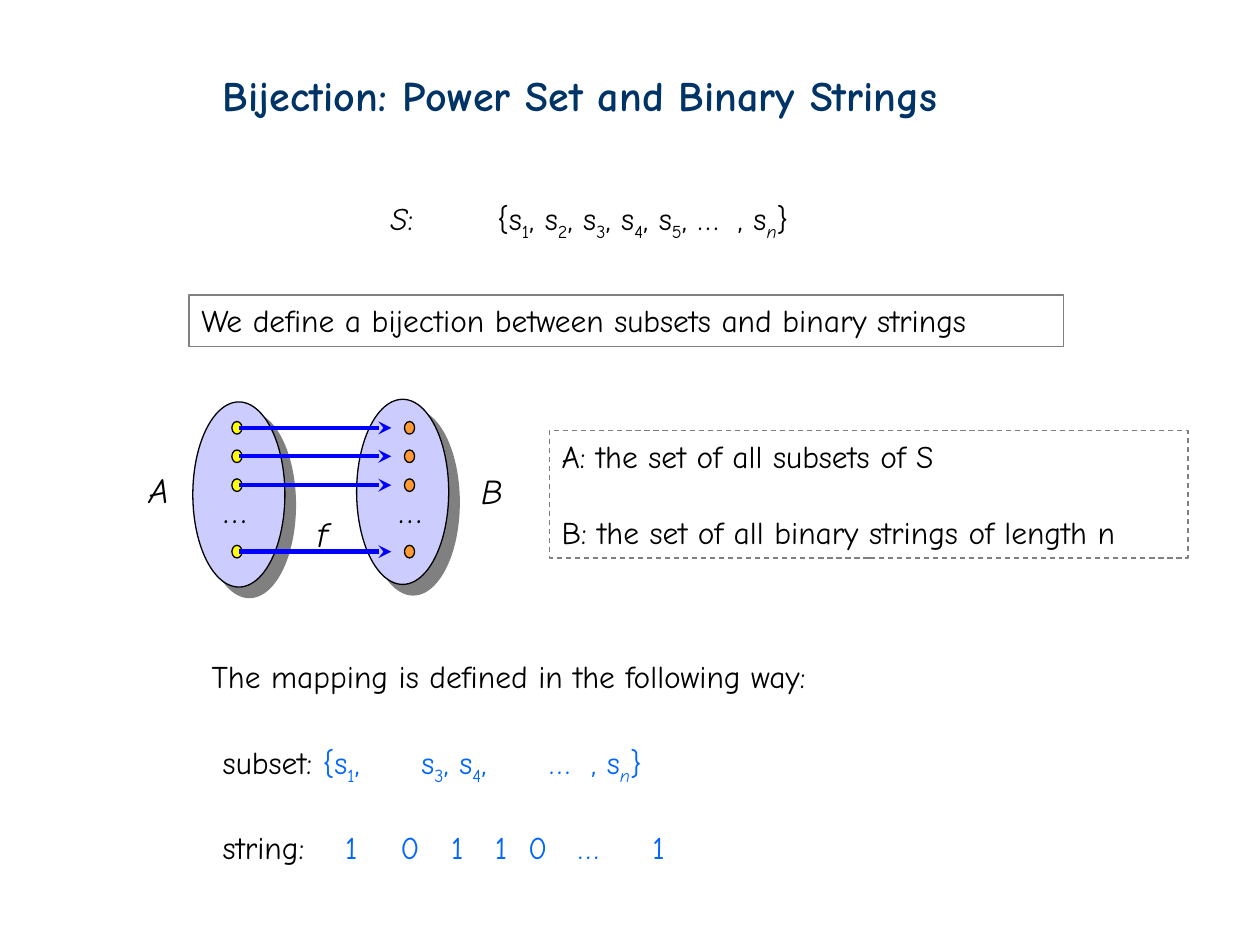
from dataclasses import dataclass
from typing import NamedTuple

from lxml import etree
from pptx import Presentation
from pptx.dml.color import RGBColor
from pptx.enum.dml import MSO_LINE
from pptx.enum.shapes import MSO_CONNECTOR, MSO_SHAPE
from pptx.enum.text import MSO_ANCHOR, PP_ALIGN
from pptx.oxml.ns import qn
from pptx.shapes.autoshape import Shape
from pptx.slide import Slide
from pptx.util import Pt

ELLIPSE, RECTANGLE = MSO_SHAPE.OVAL, MSO_SHAPE.RECTANGLE
STRAIGHT = MSO_CONNECTOR.STRAIGHT
LEFT, CENTER, TOP = PP_ALIGN.LEFT, PP_ALIGN.CENTER, MSO_ANCHOR.TOP
DASH = MSO_LINE.DASH


@dataclass(frozen=True)
class Theme:
    font: str = "Comic Neue"
    title_size: float = 24
    label_size: float = 20
    body_size: float = 18
    title: str = "003366"
    ink: str = "000000"
    accent: str = "0066FF"
    frame: str = "808080"
    set_fill: str = "CCCCFF"
    subset_dot: str = "FFFF00"
    string_dot: str = "FF9933"
    arrow: str = "0000FF"
    thin: float = 0.75
    thick: float = 2.5


THEME = Theme()


class Box(NamedTuple):
    left: float
    top: float
    width: float
    height: float

    def lengths(self) -> list[Pt]:
        return [Pt(value) for value in self]


class Span(NamedTuple):
    text: str
    color: str = THEME.ink
    italic: bool = False
    subscript: bool = False


class MappedSet(NamedTuple):
    name: str
    name_box: Box
    oval: Box
    dot_x: float
    dots_box: Box
    dot_color: str


ROW_CENTERS = (244.5, 260.75, 277.25, 315.25)
DOT_WIDTH, DOT_HEIGHT = 5.8, 7.2
ARROW_START, ARROW_END = 136.8, 223.6

SETS = (
    MappedSet("A", Box(77.8, 264.4, 28.8, 31), Box(110.2, 229.7, 52.6, 105.8),
              135.4, Box(120.2, 275.8, 28, 31), THEME.subset_dot),
    MappedSet("B", Box(267.8, 265, 27.4, 31), Box(203.8, 228.2, 52.6, 105.8),
              234, Box(220.3, 275.8, 28, 31), THEME.string_dot),
)


def color_of(value: str) -> RGBColor:
    return RGBColor.from_string(value)


def indexed(text: str, color: str = THEME.ink) -> list[Span]:
    """Turn "s_1, s_n" into spans; the character after "_" is a subscript."""
    first, *rest = text.split("_")
    spans = [Span(first, color)]
    for piece in rest:
        spans.append(Span(piece[0], color, piece[0] == "n", True))
        spans.append(Span(piece[1:], color))
    return spans


def write_text(shape: Shape, *paragraphs: list[Span], size: float = THEME.body_size,
               bold: bool = False, align: PP_ALIGN = LEFT, gap: float = 0,
               tabs: tuple[float, ...] = ()) -> None:
    """Fill a shape with paragraphs; gap separates them, tabs are stops in points."""
    frame = shape.text_frame
    frame.word_wrap = True
    frame.vertical_anchor = TOP
    for number, spans in enumerate(paragraphs):
        para = frame.add_paragraph() if number else frame.paragraphs[0]
        para.alignment = align
        if number:
            para.space_before = Pt(gap)
        if tabs:
            stops = etree.SubElement(para._p.get_or_add_pPr(), qn("a:tabLst"))
            for stop in tabs:
                etree.SubElement(stops, qn("a:tab"), pos=str(Pt(stop)), algn="l")
        for span in spans:
            run = para.add_run()
            run.text = span.text
            run.font.name = THEME.font
            run.font.size = Pt(size)
            run.font.bold = bold
            run.font.italic = span.italic
            run.font.color.rgb = color_of(span.color)
            if span.subscript:
                run._r.get_or_add_rPr().set("baseline", "-25000")


def add_text(page: Slide, box: Box, *paragraphs: list[Span], **text_format) -> None:
    write_text(page.shapes.add_textbox(*box.lengths()), *paragraphs, **text_format)


def add_outlined(page: Slide, kind: MSO_SHAPE, box: Box, line: str,
                 fill: str | None = None) -> Shape:
    shape = page.shapes.add_shape(kind, *box.lengths())
    shape.shadow.inherit = False
    if fill:
        shape.fill.solid()
        shape.fill.fore_color.rgb = color_of(fill)
    else:
        shape.fill.background()
    shape.line.color.rgb = color_of(line)
    shape.line.width = Pt(THEME.thin)
    return shape


def cast_shadow(shape: Shape) -> None:
    """Give a shape a hard grey shadow to the lower right."""
    effects = shape._element.spPr.find(qn("a:effectLst"))
    shadow = etree.SubElement(effects, qn("a:outerShdw"), blurRad="0",
                              dist=str(Pt(8.5)), dir="2700000", algn="ctr",
                              rotWithShape="0")
    etree.SubElement(shadow, qn("a:srgbClr"), val=THEME.frame)


def add_arrow(page: Slide, y: float) -> None:
    arrow = page.shapes.add_connector(STRAIGHT, Pt(ARROW_START), Pt(y),
                                      Pt(ARROW_END), Pt(y))
    arrow.line.color.rgb = color_of(THEME.arrow)
    arrow.line.width = Pt(THEME.thick)
    etree.SubElement(arrow.line._get_or_add_ln(), qn("a:tailEnd"), type="stealth")
    etree.SubElement(arrow._element.spPr, qn("a:effectLst"))


def add_mapping(page: Slide) -> None:
    for item in SETS:
        cast_shadow(add_outlined(page, ELLIPSE, item.oval, THEME.ink, THEME.set_fill))
    for item in SETS:
        add_text(page, item.name_box, [Span(item.name, italic=True)],
                 size=THEME.label_size)
        for y in ROW_CENTERS:
            dot = Box(item.dot_x - DOT_WIDTH / 2, y - DOT_HEIGHT / 2,
                      DOT_WIDTH, DOT_HEIGHT)
            add_outlined(page, ELLIPSE, dot, THEME.ink, item.dot_color)
        add_text(page, item.dots_box, [Span("…")], size=THEME.label_size, align=CENTER)
    for y in ROW_CENTERS:
        add_arrow(page, y)
    add_text(page, Box(174.2, 289.4, 24.5, 31), [Span("f", italic=True)],
             size=THEME.label_size)


def main() -> None:
    deck = Presentation()
    deck.slide_width, deck.slide_height = Pt(720), Pt(540)
    page = deck.slides.add_slide(deck.slide_layouts[6])

    add_text(page, Box(120.2, 36, 481, 36),
             [Span("Bijection: Power Set and Binary Strings", THEME.title)],
             size=THEME.title_size, bold=True)
    add_text(page, Box(216, 110.2, 288, 28.8),
             [Span("S", italic=True),
              *indexed(":\t{s_1, s_2, s_3, s_4, s_5, …\t, s_n}")], tabs=(61, 198.5))
    add_text(page, Box(120.2, 469.4, 275.8, 28.8),
             [Span("string:"), Span("\t1\t0\t1\t1\t0\t…\t1", THEME.accent)],
             tabs=(70, 101.5, 130.5, 155.5, 174.5, 203, 245.5))
    add_text(page, Box(120.2, 421.2, 282.2, 28.8),
             [Span("subset: "),
              *indexed("{s_1,\ts_3, s_4,\t…\t, s_n}", THEME.accent)],
             tabs=(113.5, 186.5, 210.5))

    claim = add_outlined(page, RECTANGLE, Box(108, 168.5, 499.7, 29.5), THEME.frame)
    write_text(claim, [Span("We define a bijection between subsets and binary strings")])

    add_mapping(page)

    legend = add_outlined(page, RECTANGLE, Box(313.9, 246.2, 365, 72.7), THEME.frame)
    legend.line.dash_style = DASH
    write_text(legend, [Span("A: the set of all subsets of S")],
               [Span("B: the set of all binary strings of length n")], gap=22)
    add_text(page, Box(113.8, 372.2, 383, 28.8),
             [Span("The mapping is defined in the following way:")])

    deck.save("out.pptx")


if __name__ == "__main__":
    main()
